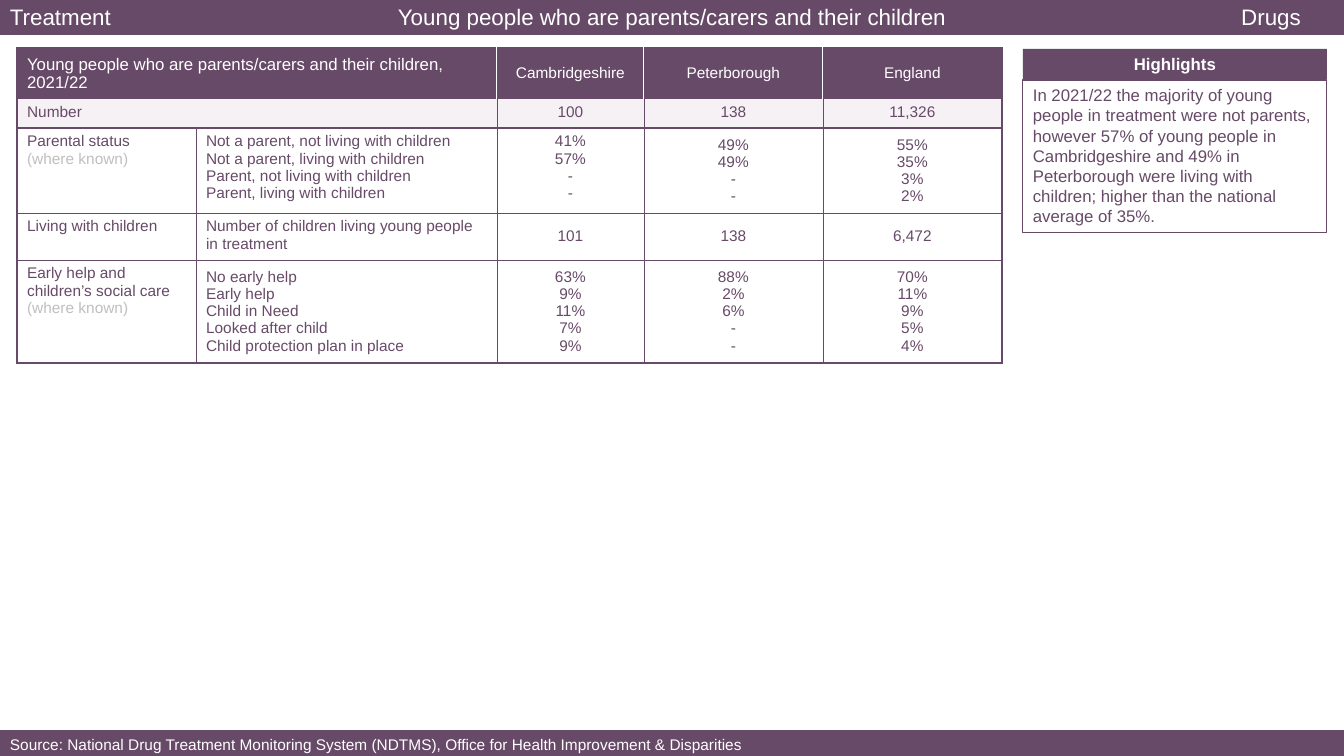
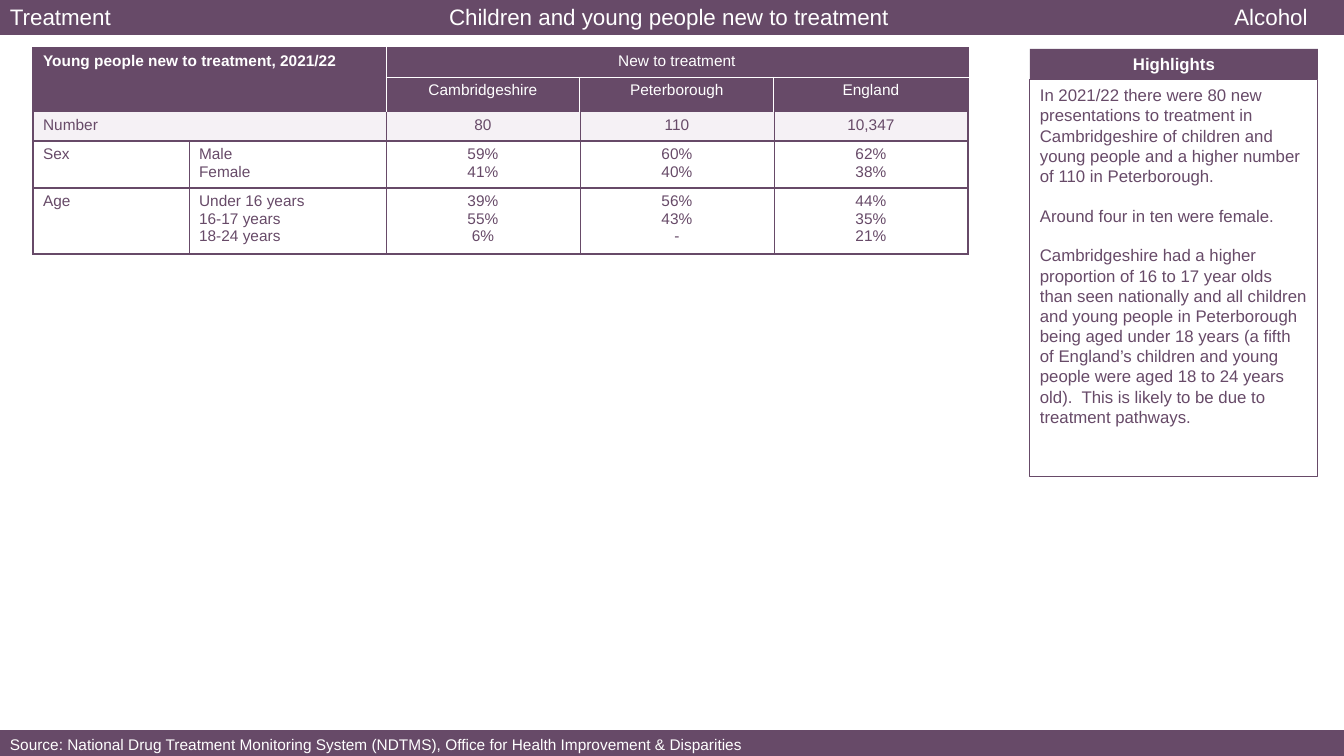
"""Build two slides on young people in drug and alcohol treatment."""
from dataclasses import dataclass
from typing import Any, NamedTuple, Optional

import pptx
import pptx.dml.color
import pptx.enum.shapes
import pptx.enum.text
import pptx.oxml
import pptx.oxml.ns
import pptx.util

PX = 12192000 / 1344
SLIDE_WIDTH, SLIDE_HEIGHT = 1344, 756
COLOURS = {"plum": "674A68", "white": "FFFFFF", "tint": "F5F1F5", "grey": "BFBFBF"}
LEFT, CENTRE = pptx.enum.text.PP_ALIGN.LEFT, pptx.enum.text.PP_ALIGN.CENTER
TOP, MIDDLE = pptx.enum.text.MSO_ANCHOR.TOP, pptx.enum.text.MSO_ANCHOR.MIDDLE
FORMATS = {
    "title": {"name": "Arial", "size": pptx.util.Pt(16), "bold": False},
    "heading": {"name": "Arial", "size": pptx.util.Pt(12), "bold": True},
    "body": {"name": "Arial", "size": pptx.util.Pt(12), "bold": False},
    "small": {"name": "Arial", "size": pptx.util.Pt(11), "bold": False},
    "small bold": {"name": "Arial", "size": pptx.util.Pt(11), "bold": True},
}
SOURCE = ("Source: National Drug Treatment Monitoring System (NDTMS), "
          "Office for Health Improvement & Disparities")
QUALIFIER = "(where known)"
BAND_TOP, BAND_HEIGHT = -2, 37
TOPIC_WIDTH = 146
FOOTER_TOP, FOOTER_HEIGHT = 730, 29
HEADING_TOP, HEADING_HEIGHT = 49, 30
TABLE_TOP = 48


class Box(NamedTuple):
    """Place and size in px."""

    left: int
    top: int
    width: int
    height: int


class Border(NamedTuple):
    """Colour and width in points of a cell edge."""

    colour: str
    width: float


class Row(NamedTuple):
    """Table row; cells from column middle_from on are centred vertically."""

    height: int
    cells: list[str]
    middle_from: int = 5


class Merge(NamedTuple):
    """First and last cell of a merged block."""

    first: tuple[int, int]
    last: tuple[int, int]


@dataclass
class Statistics:
    """Table of treatment statistics."""

    left: int
    widths: list[int]
    rows: list[Row]
    merges: list[Merge]
    header_rows: int
    title_format: str
    separator: float


@dataclass
class Page:
    """Content of one slide."""

    title: str
    topic: str
    section_width: int
    statistics: Statistics
    highlights: list[str]
    highlights_box: Box


OUTER = Border("plum", 1.5)
HEADER_RULE = Border("white", 0.75)
COLUMN_RULE = Border("plum", 0.5)
NUMBER_RULE = Border("plum", 1)

PAGES = [
    Page(
        title="Young people who are parents/carers and their children",
        topic="Drugs",
        section_width=211,
        statistics=Statistics(
            left=17,
            widths=[179, 301, 147, 179, 179],
            rows=[
                Row(51, ["Young people who are parents/carers and their children, 2021/22", "",
                         "Cambridgeshire", "Peterborough", "England"], 0),
                Row(29, ["Number", "", "100", "138", "11,326"]),
                Row(85, ["Parental status\n(where known)",
                         "Not a parent, not living with children\n"
                         "Not a parent, living with children\n"
                         "Parent, not living with children\n"
                         "Parent, living with children",
                         "41%\n57%\n-\n-", "49%\n49%\n-\n-", "55%\n35%\n3%\n2%"], 3),
                Row(47, ["Living with children",
                         "Number of children living young people in treatment",
                         "101", "138", "6,472"], 2),
                Row(103, ["Early help and children’s social care\n(where known)",
                          "No early help\nEarly help\nChild in Need\n"
                          "Looked after child\nChild protection plan in place",
                          "63%\n9%\n11%\n7%\n9%", "88%\n2%\n6%\n-\n-",
                          "70%\n11%\n9%\n5%\n4%"], 1),
            ],
            merges=[Merge((0, 0), (0, 1)), Merge((1, 0), (1, 1))],
            header_rows=1,
            title_format="body",
            separator=0.5,
        ),
        highlights=[
            "In 2021/22 the majority of young people in treatment were not parents, "
            "however 57% of young people in Cambridgeshire and 49% in Peterborough were "
            "living with children; higher than the national average of 35%.",
        ],
        highlights_box=Box(1023, 80, 304, 153),
    ),
    Page(
        title="Children and young people new to treatment ",
        topic="Alcohol",
        section_width=362,
        statistics=Statistics(
            left=33,
            widths=[156, 197, 194, 194, 194],
            rows=[
                Row(29, ["Young people new to treatment, 2021/22", "",
                         "New to treatment", "", ""]),
                Row(35, ["", "", "Cambridgeshire", "Peterborough", "England"]),
                Row(29, ["Number", "", "80", "110", "10,347"]),
                Row(47, ["Sex", "Male\nFemale", "59%\n41%", "60%\n40%", "62%\n38%"]),
                Row(66, ["Age", "Under 16 years\n16-17 years\n18-24 years",
                         "39%\n55%\n6%", "56%\n43%\n-", "44%\n35%\n21%"]),
            ],
            merges=[Merge((0, 0), (1, 1)), Merge((0, 2), (0, 4)), Merge((2, 0), (2, 1))],
            header_rows=2,
            title_format="small bold",
            separator=1,
        ),
        highlights=[
            "In 2021/22 there were 80 new presentations to treatment in Cambridgeshire of "
            "children and young people and a higher number of 110 in Peterborough.",
            "Around four in ten were female.",
            "Cambridgeshire had a higher proportion of 16 to 17 year olds than seen "
            "nationally and all children and young people in Peterborough being aged under "
            "18 years (a fifth of England’s children and young people were aged 18 to 24 "
            "years old).  This is likely to be due to treatment pathways.",
        ],
        highlights_box=Box(1030, 80, 288, 397),
    ),
]


def emu(px: int) -> int:
    """Turn px into EMU."""
    return round(px * PX)


def rgb(colour: str) -> pptx.dml.color.RGBColor:
    """Look up a named colour."""
    return pptx.dml.color.RGBColor.from_string(COLOURS[colour])


def write(frame: Any, lines: list[str], style: str, colour: str, align: Any,
          gap: int = 0) -> None:
    """Write one paragraph per line, with a gap in points between them."""
    for index, line in enumerate(lines):
        paragraph = frame.add_paragraph() if index else frame.paragraphs[0]
        paragraph.alignment = align
        if index:
            paragraph.space_before = pptx.util.Pt(gap)
        run = paragraph.add_run()
        run.text = line
        for attribute, value in FORMATS[style].items():
            setattr(run.font, attribute, value)
        run.font.color.rgb = rgb("grey" if line == QUALIFIER else colour)


def add_panel(slide: Any, box: Box, lines: list[str], style: str, align: Any = LEFT,
              filled: bool = True) -> None:
    """Draw a plum band, or an outlined panel, with text."""
    panel = slide.shapes.add_shape(pptx.enum.shapes.MSO_SHAPE.RECTANGLE, *map(emu, box))
    panel.shadow.inherit = False
    if filled:
        panel.fill.solid()
        panel.fill.fore_color.rgb = rgb("plum")
        panel.line.fill.background()
    else:
        panel.fill.background()
        panel.line.color.rgb = rgb("plum")
        panel.line.width = pptx.util.Pt(0.75)
    panel.text_frame.word_wrap = True
    panel.text_frame.vertical_anchor = TOP
    write(panel.text_frame, lines, style, "white" if filled else "plum", align, gap=14)


def column_border(statistics: Statistics, row: int, edge: int) -> Border:
    """Give the border on a vertical edge."""
    if edge in (0, len(statistics.widths)):
        return OUTER
    return HEADER_RULE if row < statistics.header_rows else COLUMN_RULE


def row_border(statistics: Statistics, edge: int) -> Optional[Border]:
    """Give the border on a horizontal edge."""
    if edge in (0, len(statistics.rows)):
        return OUTER
    if edge == statistics.header_rows:
        return None
    if edge < statistics.header_rows:
        return HEADER_RULE
    if edge == statistics.header_rows + 1:
        return NUMBER_RULE
    return Border("plum", statistics.separator)


def set_border(cell: Any, side: str, border: Optional[Border]) -> None:
    """Add one border to a cell."""
    width = pptx.util.Pt(border.width) if border else 0
    paint = (f'<a:solidFill><a:srgbClr val="{COLOURS[border.colour]}"/></a:solidFill>'
             if border else "<a:noFill/>")
    namespace = pptx.oxml.ns.nsdecls("a")
    cell._tc.get_or_add_tcPr().append(pptx.oxml.parse_xml(
        f'<a:ln{side} {namespace} w="{width}">{paint}</a:ln{side}>'))


def style_cell(cell: Any, statistics: Statistics, row: int, column: int) -> None:
    """Set the borders and fill of a cell."""
    borders = {
        "L": column_border(statistics, row, column),
        "R": column_border(statistics, row, column + cell.span_width),
        "T": row_border(statistics, row),
        "B": row_border(statistics, row + cell.span_height),
    }
    for side, border in borders.items():
        set_border(cell, side, None if cell.is_spanned else border)
    cell.fill.solid()
    fills = {True: "plum", row == statistics.header_rows: "tint",
             row > statistics.header_rows: "white"}
    header = row < statistics.header_rows
    cell.fill.fore_color.rgb = rgb("plum" if header else fills[True])


def add_statistics(slide: Any, statistics: Statistics) -> None:
    """Draw the statistics table."""
    widths, rows = statistics.widths, statistics.rows
    box = Box(statistics.left, TABLE_TOP, sum(widths), sum(row.height for row in rows))
    table = slide.shapes.add_table(len(rows), len(widths), *map(emu, box)).table
    table.first_row = table.horz_banding = False
    for column, width in zip(table.columns, widths):
        column.width = emu(width)
    for merge in statistics.merges:
        table.cell(*merge.first).merge(table.cell(*merge.last))
    for r, row in enumerate(rows):
        table.rows[r].height = emu(row.height)
        for c, text in enumerate(row.cells):
            cell = table.cell(r, c)
            style_cell(cell, statistics, r, c)
            cell.vertical_anchor = MIDDLE if c >= row.middle_from else TOP
            if not cell.is_spanned:
                style = statistics.title_format if r == c == 0 else "small"
                colour = "white" if r < statistics.header_rows else "plum"
                write(cell.text_frame, text.split("\n"), style, colour,
                      CENTRE if c > 1 else LEFT)


def add_page(deck: Any, page: Page) -> None:
    """Draw one slide."""
    slide = deck.slides.add_slide(deck.slide_layouts[6])
    topic_left = SLIDE_WIDTH - TOPIC_WIDTH
    add_panel(slide, Box(0, BAND_TOP, SLIDE_WIDTH, BAND_HEIGHT), [page.title], "title", CENTRE)
    add_panel(slide, Box(0, BAND_TOP, page.section_width, BAND_HEIGHT), ["Treatment"], "title")
    add_panel(slide, Box(topic_left, BAND_TOP, TOPIC_WIDTH, BAND_HEIGHT), [page.topic],
              "title", CENTRE)
    add_panel(slide, Box(0, FOOTER_TOP, SLIDE_WIDTH, FOOTER_HEIGHT), [SOURCE], "small")
    add_statistics(slide, page.statistics)
    add_panel(slide, page.highlights_box, page.highlights, "body", filled=False)
    heading_box = page.highlights_box._replace(top=HEADING_TOP, height=HEADING_HEIGHT)
    add_panel(slide, heading_box, ["Highlights"], "heading", CENTRE)


def main() -> None:
    """Build and save the deck."""
    deck = pptx.Presentation()
    deck.slide_width, deck.slide_height = emu(SLIDE_WIDTH), emu(SLIDE_HEIGHT)
    for page in PAGES:
        add_page(deck, page)
    deck.save("out.pptx")


if __name__ == "__main__":
    main()
